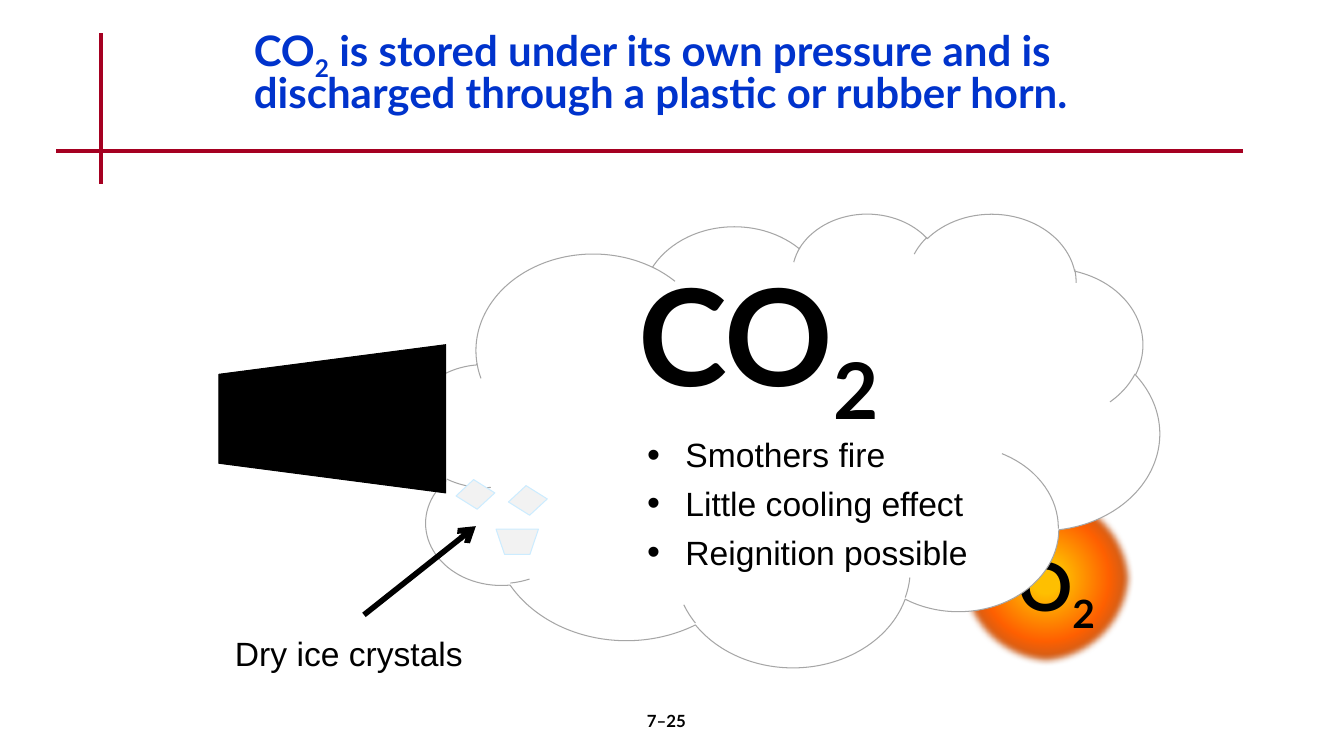
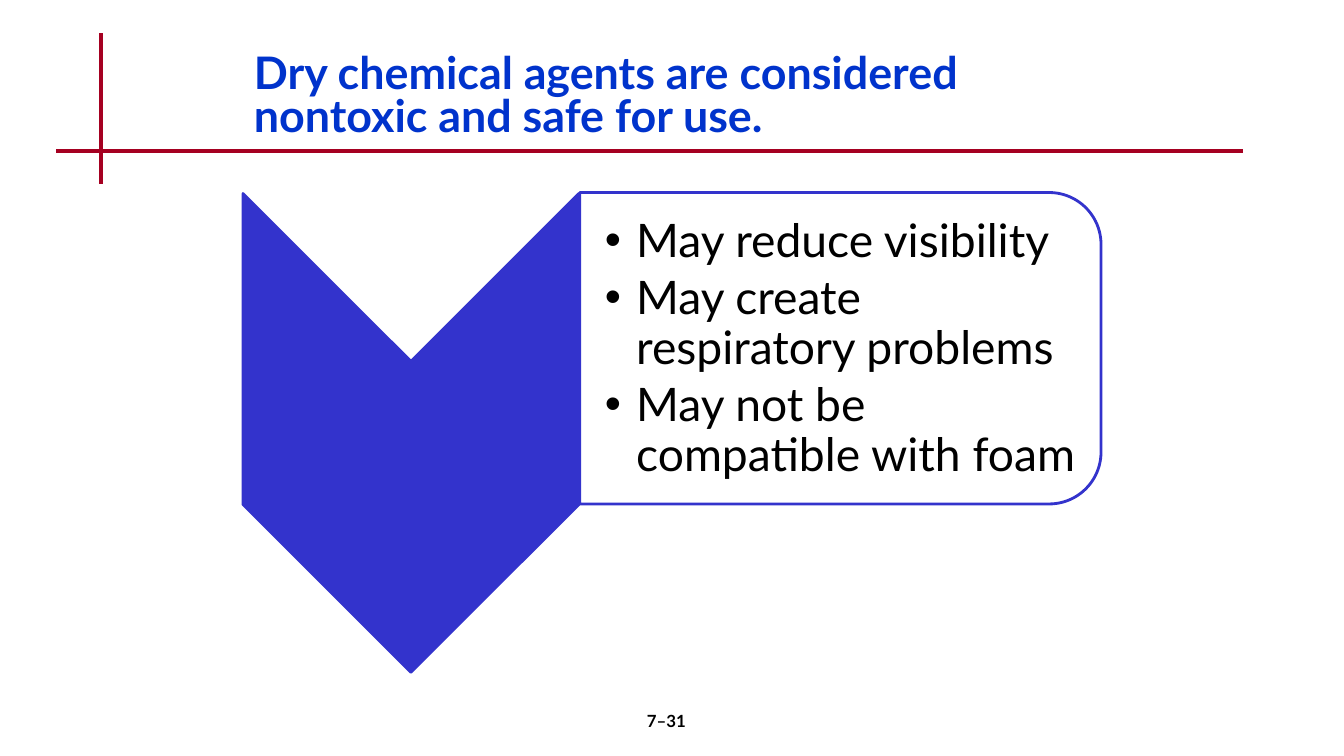
from dataclasses import dataclass

from pptx import Presentation
from pptx.dml.color import RGBColor
from pptx.enum.shapes import MSO_CONNECTOR as Connector, MSO_SHAPE as Shape
from pptx.enum.text import MSO_ANCHOR as Anchor, MSO_AUTO_SIZE as AutoSize, PP_ALIGN as Align
from pptx.oxml import parse_xml
from pptx.oxml.ns import nsdecls, qn
from pptx.oxml.xmlchemy import OxmlElement
from pptx.util import Inches, Pt


@dataclass(frozen=True)
class Theme:
    # Colours
    title: str = "0033CC"
    rule: str = "A50021"
    ink: str = "000000"
    paper: str = "FFFFFF"
    accent: str = "3333CC"
    cloud_edge: str = "A6A6A6"
    crystal: str = "F2F2F2"
    crystal_edge: str = "CCECFF"
    fire: tuple = ((2, "FFC000"), (12, "FFC000"), (50, "FF6000"), (98, "595959"))
    # Fonts and type sizes
    heading_font: str = "Lato"
    body_font: str = "Arial"
    footer: int = 12
    body: int = 24
    title_size: int = 32
    list_size: int = 33
    fire_label: int = 48
    gas_label: int = 96


THEME = Theme()


def apply(target, values):
    for name, value in values.items():
        setattr(target, name, value)


def add_element(parent, tag, **attributes):
    element = OxmlElement(tag)
    for name, value in attributes.items():
        element.set(name, str(value))
    parent.append(element)
    return element


class Deck:
    def __init__(self):
        self.deck = Presentation()
        apply(self.deck, {"slide_width": Inches(13.33), "slide_height": Inches(7.5)})
        self.page = None

    def new_page(self):
        """Start a page with the crossing rules."""
        self.page = self.deck.slides.add_slide(self.deck.slide_layouts[6])
        self.line((1, 0.33), (1, 1.83), THEME.rule, 3)
        self.line((0.56, 1.5), (12.33, 1.5), THEME.rule, 3)

    def line(self, start, end, color, width, arrow=False):
        ends = [Inches(value) for value in (*start, *end)]
        line = self.page.shapes.add_connector(Connector.STRAIGHT, *ends)
        line.line.color.rgb = RGBColor.from_string(color)
        line.line.width = Pt(width)
        if arrow:
            add_element(line.line._get_or_add_ln(), "a:tailEnd", type="arrow")
        add_element(line._element.spPr, "a:effectLst")

    def shape(self, kind, place, fill=None, edge=None, width=0.75, turn=0):
        shape = self.page.shapes.add_shape(kind, *map(Inches, place))
        apply(shape, {"rotation": turn})
        shape.shadow.inherit = False
        if fill:
            shape.fill.solid()
            shape.fill.fore_color.rgb = RGBColor.from_string(fill)
        else:
            shape.fill.background()
        if edge:
            shape.line.color.rgb = RGBColor.from_string(edge)
            shape.line.width = Pt(width)
        else:
            shape.line.fill.background()
        return shape

    def glow(self, place, stops, soft_edge):
        """Ellipse with a radial gradient and a soft edge."""
        properties = self.shape(Shape.OVAL, place)._element.spPr
        stop_list = "".join(
            f'<a:gs pos="{percent * 1000}"><a:srgbClr val="{color}"/></a:gs>'
            for percent, color in stops
        )
        gradient = parse_xml(
            f'<a:gradFill {nsdecls("a")} rotWithShape="1"><a:gsLst>{stop_list}</a:gsLst>'
            '<a:path path="circle"><a:fillToRect l="50000" t="50000" r="50000" b="50000"/>'
            "</a:path></a:gradFill>"
        )
        properties.replace(properties.find(qn("a:noFill")), gradient)
        add_element(properties.find(qn("a:effectLst")), "a:softEdge", rad=Pt(soft_edge))

    def text(self, place, lines, size, color=THEME.ink, font=THEME.heading_font, bold=False,
             indent=0, bullet_size=100, frame=None, **layout):
        """Text box; a part between ~ marks is a subscript."""
        box = self.page.shapes.add_textbox(*map(Inches, place)).text_frame
        apply(box, {"word_wrap": True, **(frame or {})})
        for index, words in enumerate(lines):
            para = box.paragraphs[0] if index == 0 else box.add_paragraph()
            if indent:
                properties = para._p.get_or_add_pPr()
                properties.set("marL", str(Inches(indent)))
                properties.set("indent", str(-Inches(indent)))
                add_element(properties, "a:buSzPct", val=bullet_size * 1000)
                add_element(properties, "a:buFont", typeface=THEME.body_font)
                add_element(properties, "a:buChar", char="•")
            apply(para, layout)
            if index == 0:
                para.space_before = Pt(0)
            for part, piece in enumerate(words.split("~")):
                if not piece:
                    continue
                span = para.add_run()
                span.text = piece
                apply(span.font, {"name": font, "size": Pt(size), "bold": bold})
                span.font.color.rgb = RGBColor.from_string(color)
                if part % 2:
                    span._r.get_or_add_rPr().set("baseline", "-25000")

    def title(self, words, top, size=THEME.title_size):
        self.text((2.42, top, 8.5, 1.5 - top), [words], size, THEME.title,
                  bold=True, line_spacing=0.8)

    def footer(self, number):
        self.text((5.22, 7, 2.78, 0.5), [number], THEME.footer, bold=True,
                  alignment=Align.CENTER)

    def formula(self, place, words, size):
        self.text(place, [words], size, bold=True,
                  frame={"word_wrap": False, "auto_size": AutoSize.SHAPE_TO_FIT_TEXT})


def carbon_dioxide_page(deck):
    deck.new_page()
    # Fire behind the cloud
    deck.glow((9.5, 4.86, 1.75, 1.75), THEME.fire, soft_edge=5)
    deck.title("CO~2~ is stored under its own pressure and is "
               "discharged through a plastic or rubber horn.", top=0.25, size=30)
    deck.footer("7–25")
    deck.formula((10, 5.35, 1.01, 0.91), "O~2~", THEME.fire_label)
    deck.shape(Shape.CLOUD, (4.06, 2.11, 7.44, 4.5), THEME.paper, THEME.cloud_edge)
    # Dry ice crystals
    crystal_style = {"fill": THEME.crystal, "edge": THEME.crystal_edge}
    for left, top in ((4.56, 4.79), (5.08, 4.85)):
        deck.shape(Shape.FLOWCHART_DATA, (left, top, 0.31, 0.23), turn=32.1, **crystal_style)
    deck.shape(Shape.FLOWCHART_MANUAL_OPERATION, (4.92, 5.25, 0.42, 0.25), **crystal_style)
    # Horn
    deck.shape(Shape.FLOWCHART_MANUAL_OPERATION, (2.56, 3.03, 1.47, 2.25),
               THEME.ink, THEME.ink, turn=90)
    # Labels and effects
    deck.formula((6.23, 2.45, 3.1, 1.72), "CO~2~", THEME.gas_label)
    deck.line((3.61, 6.1), (4.72, 5.22), THEME.ink, 4, arrow=True)
    deck.text((2, 6.23, 2.92, 0.51), ["Dry ice crystals"], THEME.body,
              font=THEME.body_font, alignment=Align.CENTER)
    deck.text((6.32, 4.26, 3.85, 1.47),
              ["Smothers fire", "Little cooling effect", "Reignition possible"],
              THEME.body, font=THEME.body_font, indent=0.38, bullet_size=110,
              space_before=Pt(6))


def dry_chemical_page(deck):
    deck.new_page()
    # Chevron and panel
    deck.shape(Shape.CHEVRON, (1.7, 2.63, 4.75, 3.33), THEME.accent, THEME.accent, 2, turn=90)
    deck.shape(Shape.ROUND_2_SAME_RECTANGLE, (6.79, 0.87, 3.09, 5.17),
               THEME.paper, THEME.accent, 2, turn=90)
    margins = {f"margin_{side}": Inches(0.02) for side in ("top", "right", "bottom")}
    deck.text((5.74, 2.07, 5.02, 2.79),
              ["May reduce visibility", "May create respiratory problems",
               "May not be compatible with foam"],
              THEME.list_size, indent=0.31, line_spacing=0.9, space_after=Pt(5),
              frame={"vertical_anchor": Anchor.MIDDLE, "margin_left": Inches(0.26), **margins})
    deck.title("Dry chemical agents are considered nontoxic and safe for use.", top=0.5)
    deck.footer("7–31")


def main():
    deck = Deck()
    carbon_dioxide_page(deck)
    dry_chemical_page(deck)
    deck.deck.save("out.pptx")


if __name__ == "__main__":
    main()
